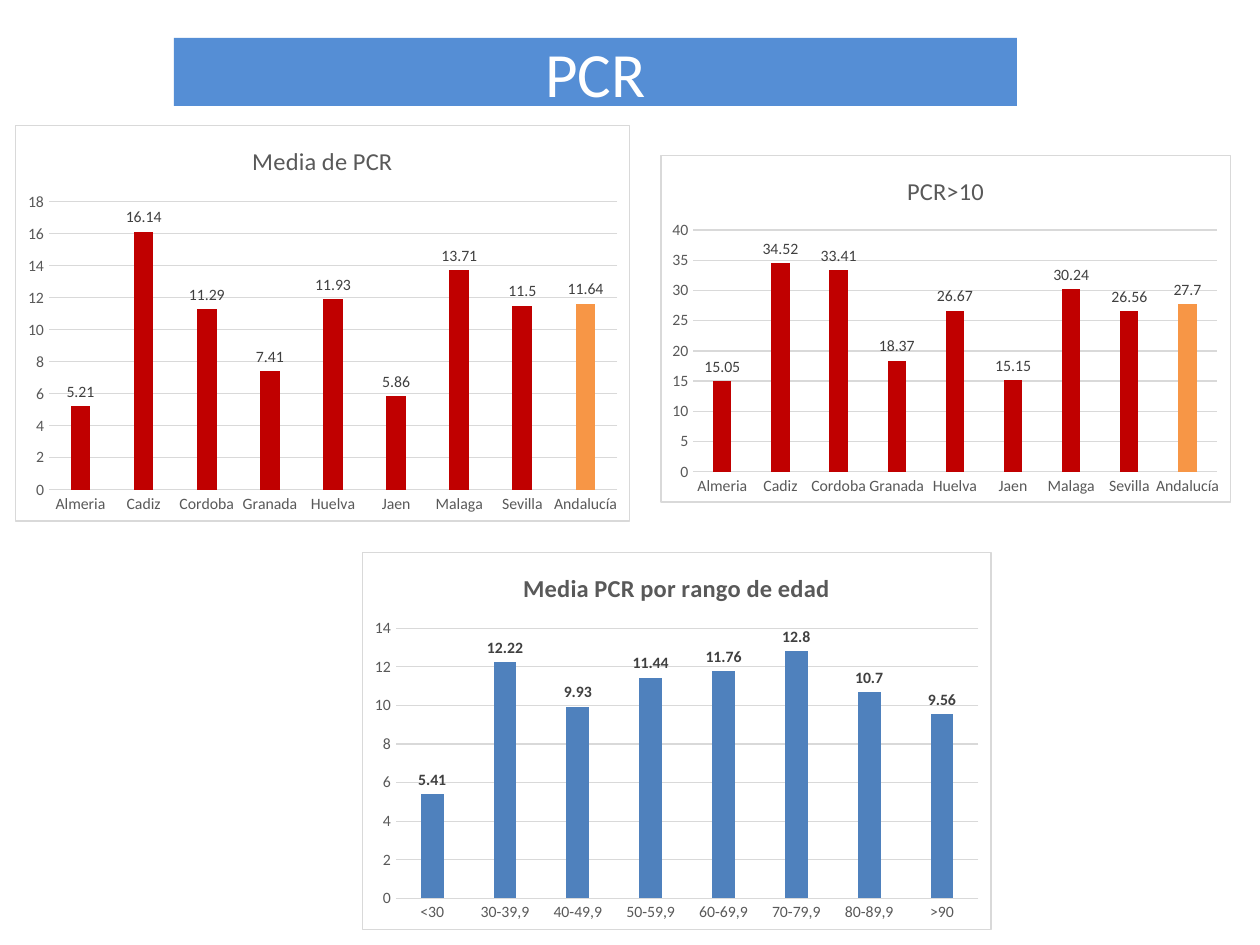
from dataclasses import dataclass

from lxml.etree import fromstring
from pptx import Presentation
from pptx.chart.data import CategoryChartData
from pptx.dml.color import RGBColor
from pptx.enum.chart import XL_CHART_TYPE, XL_LABEL_POSITION, XL_TICK_MARK
from pptx.enum.text import MSO_ANCHOR, PP_ALIGN
from pptx.oxml.ns import qn
from pptx.util import Inches, Pt


@dataclass(frozen=True)
class Theme:
    font: str = "Calibri"
    banner: str = "558ED5"
    white: str = "FFFFFF"
    black: str = "000000"
    axis_text: str = "595959"
    label_text: str = "404040"
    rule: str = "D9D9D9"
    province: str = "C00000"
    region: str = "F79646"
    age: str = "4F81BD"
    title_size: int = 36
    chart_title_size: int = 14
    chart_size: int = 10
    small_size: int = 9
    rule_width: float = 0.75


theme = Theme()


def style_font(font, size, color, bold=False):
    font.name = theme.font
    font.size = Pt(size)
    font.bold = bold
    font.color.rgb = RGBColor.from_string(color)


def style_line(line):
    line.color.rgb = RGBColor.from_string(theme.rule)
    line.width = Pt(theme.rule_width)


deck = Presentation()
deck.slide_width = Inches(10)
deck.slide_height = Inches(7.5)
page = deck.slides.add_slide(deck.slide_layouts[5])

title = page.shapes.title
title.left, title.top, title.width, title.height = map(Inches, (1.38, 0.3, 6.69, 0.54))
title.fill.solid()
title.fill.fore_color.rgb = RGBColor.from_string(theme.banner)
title.text_frame.text = "PCR"
title.text_frame.vertical_anchor = MSO_ANCHOR.MIDDLE
para = title.text_frame.paragraphs[0]
para.alignment = PP_ALIGN.CENTER
style_font(para.runs[0].font, theme.title_size, theme.white)

provinces = ["Almeria", "Cadiz", "Cordoba", "Granada", "Huelva", "Jaen", "Malaga", "Sevilla", "Andalucía"]
ages = ["<30", "30-39,9", "40-49,9", "50-59,9", "60-69,9", "70-79,9", "80-89,9", ">90"]
charts = [
    ("Media de PCR", (0.12, 0.99, 4.88, 3.15), provinces,
     [5.21, 16.14, 11.29, 7.41, 11.93, 5.86, 13.71, 11.5, 11.64], 18, 2, theme.province, False),
    ("PCR>10", (5.24, 1.23, 4.53, 2.76), provinces,
     [15.05, 34.52, 33.41, 18.37, 26.67, 15.15, 30.24, 26.56, 27.7], 40, 5, theme.province, False),
    ("Media PCR por rango de edad", (2.87, 4.38, 5, 3), ages,
     [5.41, 12.22, 9.93, 11.44, 11.76, 12.8, 10.7, 9.56], 14, 2, theme.age, True),
]

frame_xml = f"""
<c:spPr xmlns:c="http://schemas.openxmlformats.org/drawingml/2006/chart"
        xmlns:a="http://schemas.openxmlformats.org/drawingml/2006/main">
  <a:solidFill><a:srgbClr val="{theme.white}"/></a:solidFill>
  <a:ln w="{Pt(theme.rule_width)}"><a:solidFill><a:srgbClr val="{theme.rule}"/></a:solidFill></a:ln>
</c:spPr>"""

for heading, place, categories, values, top_value, step, color, bold in charts:
    data = CategoryChartData()
    data.categories = categories
    data.add_series("Series 1", values)
    chart = page.shapes.add_chart(XL_CHART_TYPE.COLUMN_CLUSTERED, *map(Inches, place), data).chart
    style_font(chart.font, theme.chart_size, theme.black)
    chart.has_legend = False
    chart.has_title = True
    chart.chart_title.include_in_layout = False
    chart.chart_title.text_frame.text = heading
    span = chart.chart_title.text_frame.paragraphs[0].runs[0]
    style_font(span.font, theme.chart_title_size, theme.axis_text, bold)
    chart.element.find(qn("c:chart")).addnext(fromstring(frame_xml))

    for axis in (chart.category_axis, chart.value_axis):
        axis.major_tick_mark = XL_TICK_MARK.NONE
        axis.minor_tick_mark = XL_TICK_MARK.NONE
        style_font(axis.tick_labels.font, theme.small_size, theme.axis_text)
    style_line(chart.category_axis.format.line)
    chart.value_axis.format.line.fill.background()
    chart.value_axis.minimum_scale = 0
    chart.value_axis.maximum_scale = top_value
    chart.value_axis.major_unit = step
    style_line(chart.value_axis.major_gridlines.format.line)

    plot = chart.plots[0]
    plot.vary_by_categories = False
    plot.gap_width = 219
    plot.overlap = -27
    series = plot.series[0]
    series.format.fill.solid()
    series.format.fill.fore_color.rgb = RGBColor.from_string(color)
    labels = series.data_labels
    labels.show_value = True
    labels.position = XL_LABEL_POSITION.OUTSIDE_END
    style_font(labels.font, theme.small_size, theme.label_text, bold)
    if categories is provinces:
        region_fill = series.points[len(provinces) - 1].format.fill
        region_fill.solid()
        region_fill.fore_color.rgb = RGBColor.from_string(theme.region)

deck.save("out.pptx")
